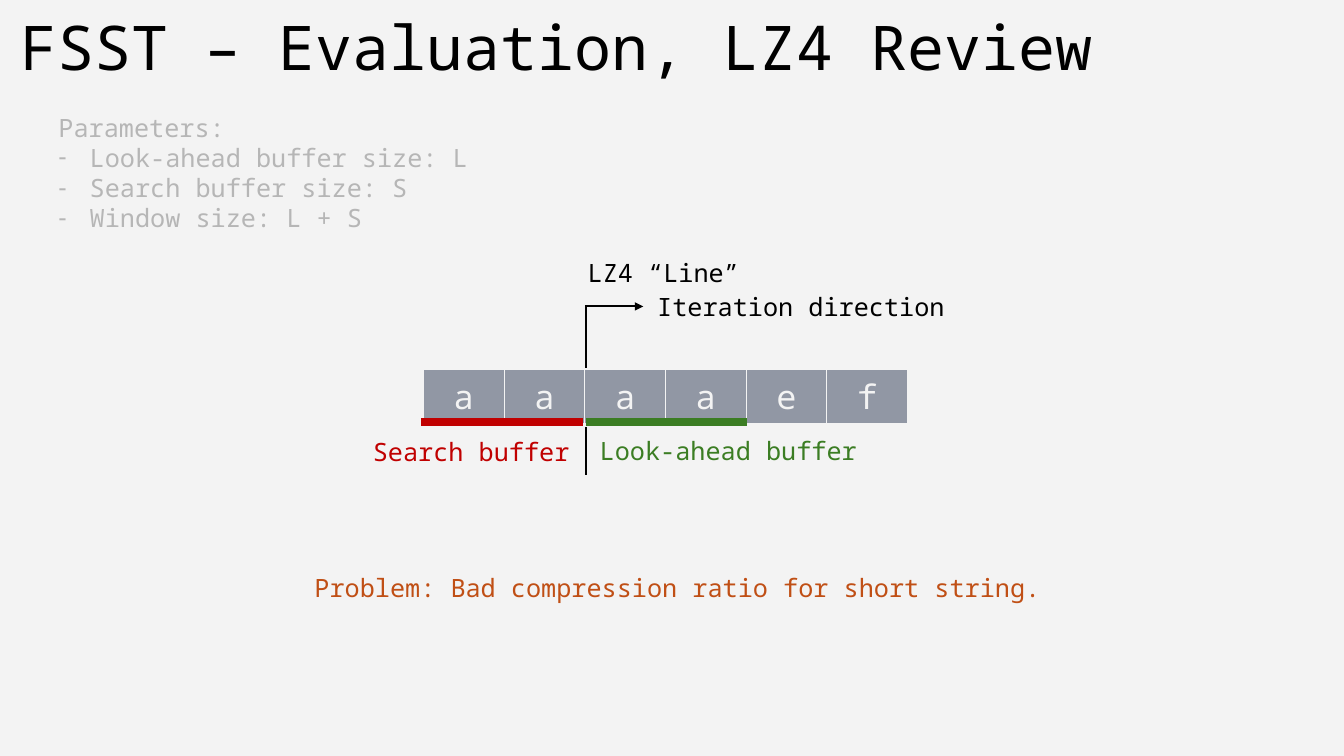
from lxml.etree import SubElement
from pptx import Presentation
from pptx.dml.color import RGBColor
from pptx.enum.shapes import MSO_CONNECTOR
from pptx.enum.text import MSO_ANCHOR, MSO_AUTO_SIZE, PP_ALIGN
from pptx.oxml.ns import qn
from pptx.util import Inches, Pt

BLACK, RED, GREEN = "000000", "C00000", "3B7D23"
ORANGE, GREY, SLATE, PAPER = "C04F15", "B6B6B6", "9197A4", "F3F3F3"


def color(value):
    return RGBColor.from_string(value)


def set_all(target, values):
    for name, value in values.items():
        setattr(target, name, value)


def add_xml(parent, tag, **attributes):
    return SubElement(parent, qn(tag), attributes)


class SlideBuilder:
    font_name = "Noto Sans Mono"
    body_size = 18

    def __init__(self, slide):
        self.slide = slide
        background = slide.background.fill
        background.solid()
        background.fore_color.rgb = color(PAPER)

    def add_text(self, paragraph, text, text_color, size=body_size, **paragraph_format):
        run = paragraph.add_run()
        run.text = text
        set_all(run.font, {"name": self.font_name, "size": Pt(size)})
        run.font.color.rgb = color(text_color)
        set_all(paragraph, paragraph_format)

    def place(self, shape, left, top, width, height):
        set_all(shape, {"left": Inches(left), "top": Inches(top),
                        "width": Inches(width), "height": Inches(height)})

    def title(self, text, *box):
        shape = self.slide.shapes.title
        self.place(shape, *box)
        set_all(shape.text_frame, {"vertical_anchor": MSO_ANCHOR.MIDDLE,
                                   "auto_size": MSO_AUTO_SIZE.NONE})
        self.add_text(shape.text_frame.paragraphs[0], text, BLACK, 44,
                      alignment=PP_ALIGN.LEFT, line_spacing=0.9)

    def parameter_list(self, heading, items, *box):
        """Fill the body placeholder with a plain heading and dashed items."""
        shape = self.slide.placeholders[1]
        self.place(shape, *box)
        frame = shape.text_frame
        set_all(frame, {"word_wrap": False, "auto_size": MSO_AUTO_SIZE.NONE})
        for index, text in enumerate([heading, *items]):
            paragraph = frame.add_paragraph() if index else frame.paragraphs[0]
            self.add_text(paragraph, text, GREY, space_before=Pt(0), line_spacing=1.0)
            properties = paragraph._p.get_or_add_pPr()
            indent = Inches(0.31) if index else 0
            properties.set("marL", str(indent))
            properties.set("indent", str(-indent))
            if index:
                add_xml(properties, "a:buFontTx")
                add_xml(properties, "a:buChar", char="-")
            else:
                add_xml(properties, "a:buNone")

    def label(self, text, left, top, width, text_color=BLACK):
        shape = self.slide.shapes.add_textbox(
            Inches(left), Inches(top), Inches(width), Inches(0.4))
        set_all(shape.text_frame, {"word_wrap": False,
                                   "auto_size": MSO_AUTO_SIZE.SHAPE_TO_FIT_TEXT})
        self.add_text(shape.text_frame.paragraphs[0], text, text_color)

    def line(self, start, end, line_color=BLACK, width=1.5, arrow=False):
        connector = self.slide.shapes.add_connector(
            MSO_CONNECTOR.STRAIGHT, *map(Inches, start + end))
        connector.line.color.rgb = color(line_color)
        connector.line.width = Pt(width)
        properties = connector._element.spPr
        if arrow:
            add_xml(properties.find(qn("a:ln")), "a:tailEnd", type="triangle")
        add_xml(properties, "a:effectLst")

    def character_row(self, characters, left, top, cell_width, height):
        frame = self.slide.shapes.add_table(
            1, len(characters), Inches(left), Inches(top),
            Inches(cell_width * len(characters)), Inches(height))
        table = frame.table
        set_all(table, {"first_row": False, "horz_banding": False})
        for column, character in enumerate(characters):
            table.columns[column].width = Inches(cell_width)
            cell = table.cell(0, column)
            self.add_text(cell.text_frame.paragraphs[0], character, PAPER, 24,
                          alignment=PP_ALIGN.CENTER)
            self.borders(cell, {"L": 1, "R": 1, "T": 1, "B": 3})
            cell.fill.solid()
            cell.fill.fore_color.rgb = color(SLATE)

    def borders(self, cell, widths):
        properties = cell._tc.get_or_add_tcPr()
        for side, width in widths.items():
            border = add_xml(properties, f"a:ln{side}", w=str(Pt(width)))
            add_xml(add_xml(border, "a:solidFill"), "a:srgbClr", val=PAPER)


def main():
    presentation = Presentation()
    set_all(presentation, {"slide_width": Inches(13.33), "slide_height": Inches(7.5)})
    builder = SlideBuilder(presentation.slides.add_slide(presentation.slide_layouts[1]))

    builder.title("FSST – Evaluation, LZ4 Review", 0.1, 0.1, 11.5, 0.81)
    builder.parameter_list(
        "Parameters:",
        ["Look-ahead buffer size: L", "Search buffer size: S", "Window size: L + S"],
        0.48, 1.06, 4.29, 1.31)

    divider, line_top, buffer_top, buffer_width = 5.81, 3.04, 4.19, 1.6
    builder.line((divider, line_top), (divider, 4.71))
    builder.character_row("aaaaef", 4.2, 3.66, 0.8, 0.5)
    builder.line((5.8, line_top), (6.38, line_top), arrow=True)
    for left, buffer_color in ((4.18, RED), (divider, GREEN)):
        builder.line((left, buffer_top), (left + buffer_width, buffer_top),
                     buffer_color, 5.75)

    builder.label("LZ4 “Line”", 5.73, 2.5, 1.71)
    builder.label("Iteration direction", 6.42, 2.84, 3.07)
    builder.label("Search buffer", 3.6, 4.28, 2.16, RED)
    builder.label("Look-ahead buffer", 5.85, 4.27, 2.76, GREEN)
    builder.label("Problem: Bad compression ratio for short string.",
                  3.02, 5.63, 7.44, ORANGE)
    presentation.save("out.pptx")


if __name__ == "__main__":
    main()
